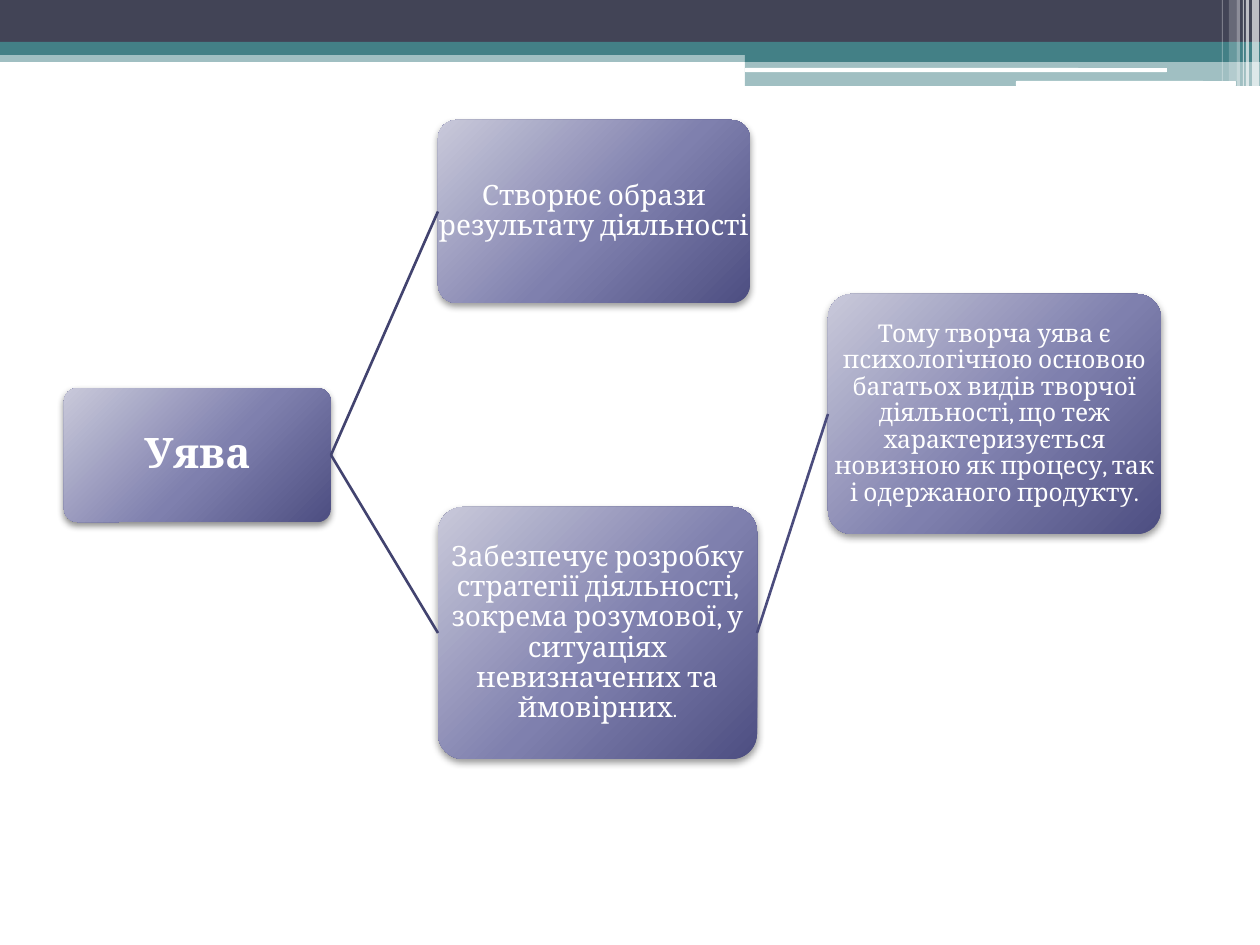
from pptx import Presentation
from pptx.dml.color import RGBColor
from pptx.enum.shapes import MSO_CONNECTOR, MSO_SHAPE
from pptx.enum.text import MSO_ANCHOR, PP_ALIGN
from pptx.oxml import parse_xml
from pptx.oxml.ns import nsdecls, qn
from pptx.util import Pt
from lxml.etree import SubElement

EMU_PER_PX = 914400 / 126
TOP, LEFT, BOTTOM, RIGHT = range(4)
COLORS = {
    "slate": "424456",
    "teal": "438086",
    "white": "FFFFFF",
    "black": "000000",
    "light": "C9C9DA",
    "middle": "7F80AE",
    "deep": "4D4E81",
    "branch": "42436F",
    "leaf": "4B4C7D",
}


def px(length):
    return round(length * EMU_PER_PX)


class SlideBuilder:
    """Draws styled elements on the current slide, with lengths in px."""

    font = "Cambria"
    gradient = ((0, "light"), (55, "middle"), (100, "deep"))

    def __init__(self, slide):
        self.slide = slide

    def color(self, name):
        return RGBColor.from_string(COLORS[name])

    def shape(self, kind, box):
        shape = self.slide.shapes.add_shape(kind, *map(px, box))
        shape.shadow.inherit = False
        shape.line.fill.background()
        return shape

    def band(self, box, color, opacity=100, kind=MSO_SHAPE.RECTANGLE):
        band = self.shape(kind, box)
        band.fill.solid()
        band.fill.fore_color.rgb = self.color(color)
        if opacity < 100:
            solid = band._element.spPr.find(qn("a:solidFill"))
            SubElement(solid[0], qn("a:alpha"), val=str(opacity * 1000))

    def card(self, box, shadow_opacity=40, blur=4.1):
        card = self.shape(MSO_SHAPE.ROUNDED_RECTANGLE, box)
        card.adjustments[0] = 0.1
        card.fill.background()
        properties = card._element.spPr
        stops = "".join(
            f'<a:gs pos="{position * 1000}"><a:srgbClr val="{COLORS[name]}"/></a:gs>'
            for position, name in self.gradient
        )
        gradient = parse_xml(
            f'<a:gradFill {nsdecls("a")} rotWithShape="1"><a:gsLst>{stops}</a:gsLst>'
            '<a:path path="circle"><a:fillToRect l="-40000" t="-90000" '
            'r="140000" b="190000"/></a:path></a:gradFill>'
        )
        properties.replace(properties.find(qn("a:noFill")), gradient)
        shadow = SubElement(
            properties.find(qn("a:effectLst")), qn("a:outerShdw"),
            blurRad=str(Pt(blur)), dist=str(Pt(2)), dir="5400000", rotWithShape="0",
        )
        shade = SubElement(shadow, qn("a:srgbClr"), val=COLORS["black"])
        SubElement(shade, qn("a:alpha"), val=str(shadow_opacity * 1000))
        return card

    def label(self, box, runs, bold=False, inset=1):
        frame = self.slide.shapes.add_textbox(*map(px, box)).text_frame
        frame.word_wrap = True
        frame.vertical_anchor = MSO_ANCHOR.MIDDLE
        frame.margin_left = frame.margin_right = px(inset)
        frame.margin_top = frame.margin_bottom = px(inset)
        paragraph = frame.paragraphs[0]
        paragraph.alignment = PP_ALIGN.CENTER
        paragraph.line_spacing = 0.9
        paragraph.font.name = self.font
        paragraph.font.bold = bold
        paragraph.font.color.rgb = self.color("white")
        for text, size in runs:
            run = paragraph.add_run()
            run.text = text
            run.font.size = Pt(size)

    def link(self, start, end, color):
        connector = self.slide.shapes.add_connector(MSO_CONNECTOR.STRAIGHT, 0, 0, 0, 0)
        connector.begin_connect(start, RIGHT)
        connector.end_connect(end, LEFT)
        connector.line.color.rgb = self.color(color)
        connector.line.width = Pt(1.5)
        SubElement(connector._element.spPr, qn("a:effectLst"))


def draw_header(builder):
    builder.band((0, 50, 1260, 12), "teal", 50)
    builder.band((0, 0, 1260, 42), "slate")
    builder.band((0, 42, 1260, 13), "teal")
    builder.band((745, 49, 515, 13), "teal")
    builder.band((745, 61, 515, 25), "teal", 50)
    for box in ((745, 68, 422, 4), (1016, 81, 220, 5)):
        builder.band(box, "white", kind=MSO_SHAPE.ROUNDED_RECTANGLE)
    stripes = (
        (1252, 7, 86, 65), (1246, 3, 86, 65), (1243, 1, 86, 60),
        (1237, 3, 86, 40), (1229, 8, 81, 20), (1222, 1, 81, 30),
    )
    for left, width, height, opacity in stripes:
        builder.band((left, 0, width, height), "white", opacity)


def draw_diagram(builder):
    root_box = (64, 388, 267, 134)
    images_box = (438, 120, 312, 183)
    strategy_box = (438, 507, 319, 252)
    basis_box = (828, 294, 333, 240)

    root = builder.card(root_box, shadow_opacity=45, blur=4)
    images, strategy, basis = map(builder.card, (images_box, strategy_box, basis_box))
    builder.link(root, images, "branch")
    builder.link(root, strategy, "branch")
    builder.link(strategy, basis, "leaf")

    builder.label(root_box, [("Уява", 24)], bold=True, inset=2)
    builder.label(images_box, [("Створює образи результату діяльності", 16)])
    builder.label(strategy_box, [
        ("Забезпечує розробку стратегії діяльності, зокрема розумової, "
         "у ситуаціях невизначених та ймовірних", 16),
        (".", 12),
    ])
    builder.label(basis_box, [
        ("Тому творча уява є психологічною основою багатьох видів творчої "
         "діяльності, що теж характеризується новизною як процесу, "
         "так і одержаного продукту.", 14),
    ])


def main():
    presentation = Presentation()
    presentation.slide_width = px(1260)
    presentation.slide_height = px(945)
    builder = SlideBuilder(presentation.slides.add_slide(presentation.slide_layouts[6]))
    draw_header(builder)
    draw_diagram(builder)
    presentation.save("out.pptx")


if __name__ == "__main__":
    main()
